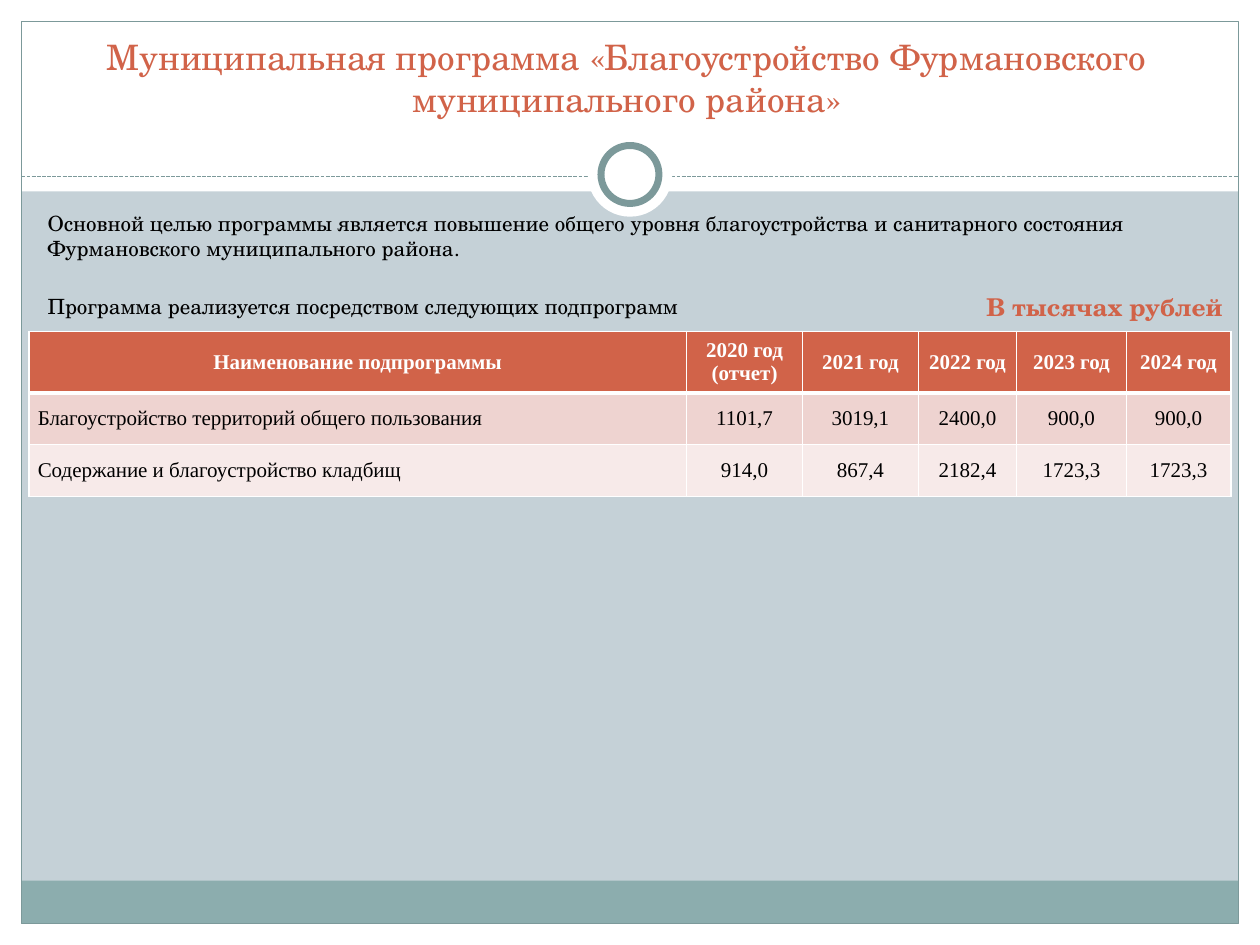
from dataclasses import dataclass

from lxml import etree
from pptx import Presentation
from pptx.dml.color import RGBColor
from pptx.enum.dml import MSO_LINE
from pptx.enum.shapes import MSO_CONNECTOR, MSO_SHAPE
from pptx.enum.text import MSO_ANCHOR, PP_ALIGN
from pptx.oxml.ns import qn
from pptx.util import Inches, Pt

RECTANGLE, OVAL = MSO_SHAPE.RECTANGLE, MSO_SHAPE.OVAL
LEFT, CENTER = PP_ALIGN.LEFT, PP_ALIGN.CENTER
TOP, MIDDLE, BOTTOM = MSO_ANCHOR.TOP, MSO_ANCHOR.MIDDLE, MSO_ANCHOR.BOTTOM
DASH = MSO_LINE.SQUARE_DOT
STRAIGHT = MSO_CONNECTOR.STRAIGHT

COLORS = {
    "background": "C5D1D7",
    "white": "FFFFFF",
    "band": "8CADAE",
    "frame": "7C999A",
    "accent": "D16349",
    "black": "000000",
    "odd_row": "EED3D0",
    "even_row": "F7EAE9",
}
HEADING_FONT, TABLE_FONT = "TeX Gyre Schola", "Times New Roman"
SLIDE_WIDTH, SLIDE_HEIGHT = Inches(10), Inches(7.5)
GRID_COLUMNS, GRID_ROWS = 100, 75
EDGE = 1.7
AXIS = GRID_COLUMNS / 2
RING_CENTER = 13.85


@dataclass(frozen=True)
class Area:
    column: float
    row: float
    columns: float
    rows: float


@dataclass(frozen=True)
class Panel:
    area: Area
    fill: str | None = "white"
    line: str | None = None
    line_width: float = 0.75
    preset: int = RECTANGLE


@dataclass(frozen=True)
class Style:
    size: float
    color: str
    font: str = HEADING_FONT
    bold: bool = False
    align: int = LEFT
    space_before: float = 0
    space_after: float = 0


@dataclass(frozen=True)
class TextBlock:
    area: Area
    paragraphs: tuple
    anchor: int = TOP


def across(columns: float) -> int:
    return round(SLIDE_WIDTH * columns / GRID_COLUMNS)


def down(rows: float) -> int:
    return round(SLIDE_HEIGHT * rows / GRID_ROWS)


def place(area: Area) -> tuple:
    return across(area.column), down(area.row), across(area.columns), down(area.rows)


def rgb(name: str) -> RGBColor:
    return RGBColor.from_string(COLORS[name])


def circle(diameter: float) -> Area:
    return Area(AXIS - diameter / 2, RING_CENTER - diameter / 2, diameter, diameter)


def draw_panel(slide, panel: Panel) -> None:
    shape = slide.shapes.add_shape(panel.preset, *place(panel.area))
    shape.shadow.inherit = False
    if panel.fill:
        shape.fill.solid()
        shape.fill.fore_color.rgb = rgb(panel.fill)
    else:
        shape.fill.background()
    if panel.line:
        shape.line.color.rgb = rgb(panel.line)
        shape.line.width = Pt(panel.line_width)
    else:
        shape.line.fill.background()


def draw_divider(slide, row: float) -> None:
    connector = slide.shapes.add_connector(
        STRAIGHT, across(EDGE), down(row), across(GRID_COLUMNS - EDGE), down(row)
    )
    connector.line.color.rgb = rgb("frame")
    connector.line.width = Pt(0.75)
    connector.line.dash_style = DASH
    etree.SubElement(connector._element.spPr, qn("a:effectLst"))


def write(paragraph, text: str, style: Style) -> None:
    paragraph.alignment = style.align
    paragraph.space_before = Pt(style.space_before)
    paragraph.space_after = Pt(style.space_after)
    run = paragraph.add_run()
    run.text = text
    run.font.size = Pt(style.size)
    run.font.name = style.font
    run.font.bold = style.bold
    run.font.color.rgb = rgb(style.color)


def draw_text(slide, block: TextBlock) -> None:
    frame = slide.shapes.add_textbox(*place(block.area)).text_frame
    frame.word_wrap = True
    frame.vertical_anchor = block.anchor
    for index, (text, style) in enumerate(block.paragraphs):
        paragraph = frame.add_paragraph() if index else frame.paragraphs[0]
        write(paragraph, text, style)


def draw_borders(cell, widths: dict) -> None:
    properties = cell._tc.get_or_add_tcPr()
    for side, width in widths.items():
        line = etree.SubElement(properties, qn(f"a:ln{side}"), w=str(Pt(width)))
        fill = etree.SubElement(line, qn("a:solidFill"))
        etree.SubElement(fill, qn("a:srgbClr"), val=COLORS["white"])


def draw_table(slide, area: Area, widths: tuple, heights: tuple, records: tuple) -> None:
    table = slide.shapes.add_table(len(heights), len(widths), *place(area)).table
    for column, width in zip(table.columns, widths):
        column.width = across(width)
    for row, height in zip(table.rows, heights):
        row.height = down(height)
    fills = ("accent", "odd_row", "even_row")
    for row_index, (record, fill) in enumerate(zip(records, fills)):
        header = row_index == 0
        for column_index, text in enumerate(record):
            cell = table.cell(row_index, column_index)
            cell.margin_left = cell.margin_right = across(0.7)
            cell.margin_top = cell.margin_bottom = 0
            cell.vertical_anchor = MIDDLE
            top, bottom = 3 if row_index == 1 else 1, 3 if header else 1
            draw_borders(cell, {"L": 1, "R": 1, "T": top, "B": bottom})
            cell.fill.solid()
            cell.fill.fore_color.rgb = rgb(fill)
            spacing = 0 if header else 2
            style = Style(
                12, "white" if header else "black", TABLE_FONT, header,
                CENTER if header or column_index else LEFT, spacing, spacing,
            )
            write(cell.text_frame.paragraphs[0], text, style)


INNER_WIDTH = GRID_COLUMNS - 2 * EDGE
INNER_HEIGHT = GRID_ROWS - 2 * EDGE
PANELS = (
    Panel(Area(0, GRID_ROWS - EDGE, GRID_COLUMNS, EDGE)),
    Panel(Area(0, 0, GRID_COLUMNS, 15.2)),
    Panel(Area(0, 0, EDGE, GRID_ROWS)),
    Panel(Area(GRID_COLUMNS - EDGE, 0, EDGE, GRID_ROWS)),
    Panel(Area(EDGE, 69.9, INNER_WIDTH, 3.4), "band"),
    Panel(Area(EDGE, EDGE, INNER_WIDTH, INNER_HEIGHT), None, "frame"),
)
RINGS = (
    Panel(circle(6.7), preset=OVAL),
    Panel(circle(4.6), line="frame", line_width=4, preset=OVAL),
)
TEXTS = (
    TextBlock(Area(3.1, 4.7, 93.3, 5.3), (
        ("Муниципальная программа «Благоустройство Фурмановского муниципального района»",
         Style(20, "accent", align=CENTER)),
    ), BOTTOM),
    TextBlock(Area(2.8, 16.2, 93, 6.7), (
        ("Основной целью программы является повышение общего уровня благоустройства "
         "и санитарного состояния Фурмановского муниципального района.",
         Style(12, "black", space_before=2.4)),
        ("Программа реализуется посредством следующих подпрограмм",
         Style(12, "black", space_before=19)),
    )),
    TextBlock(Area(77.3, 22.7, 22.7, 3), (
        ("В тысячах рублей", Style(14, "accent", bold=True)),
    )),
)
RECORDS = (
    ("Наименование подпрограммы", "2020 год (отчет)", "2021 год", "2022 год", "2023 год", "2024 год"),
    ("Благоустройство территорий общего пользования", "1101,7", "3019,1", "2400,0", "900,0", "900,0"),
    ("Содержание и благоустройство кладбищ", "914,0", "867,4", "2182,4", "1723,3", "1723,3"),
)


def main() -> None:
    presentation = Presentation()
    presentation.slide_width, presentation.slide_height = SLIDE_WIDTH, SLIDE_HEIGHT
    slide = presentation.slides.add_slide(presentation.slide_layouts[6])
    slide.background.fill.solid()
    slide.background.fill.fore_color.rgb = rgb("background")
    for panel in PANELS:
        draw_panel(slide, panel)
    draw_divider(slide, 14)
    for ring in RINGS:
        draw_panel(slide, ring)
    for block in TEXTS:
        draw_text(slide, block)
    draw_table(slide, Area(2.3, 26.3, 95.3, 13), (52.2, 9.2, 9.2, 7.8, 8.7, 8.3), (4.9, 4.1, 4.1), RECORDS)
    presentation.save("out.pptx")


if __name__ == "__main__":
    main()
